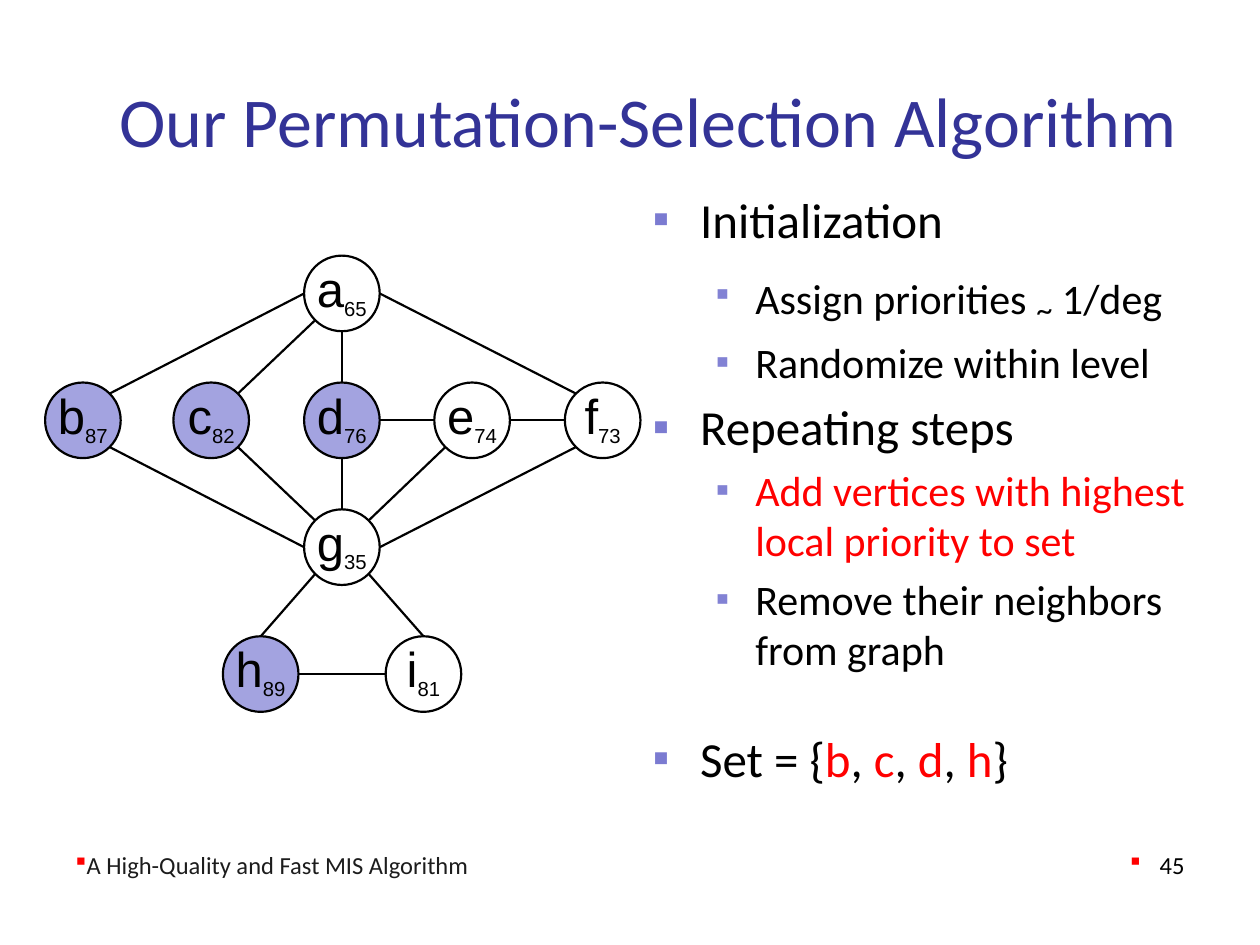
"""Build the permutation-selection algorithm slide with its priority graph."""
import pptx
import pptx.util
import pptx.dml.color
import pptx.enum.shapes
import pptx.enum.text
import pptx.oxml
import pptx.oxml.ns

Pt = pptx.util.Pt
ANCHOR = pptx.enum.text.MSO_ANCHOR
ALIGN = pptx.enum.text.PP_ALIGN
COLORS = {
    "title": "333397", "text": "000000", "accent": "FF0000", "footer": "1C1C1C",
    "chosen": "A3A3E0", "open": "FFFFFF", "bullet": "7B7BD1", "subbullet": "8282D4",
}


def add_run(p, text, size, color="text", font="Calibri", baseline=0):
    r = p.add_run()
    r.text = text
    for name, value in {"size": Pt(size), "name": font}.items():
        setattr(r.font, name, value)
    r.font.color.rgb = pptx.dml.color.RGBColor.from_string(COLORS[color])
    if baseline:
        r._r.get_or_add_rPr().set("baseline", str(baseline * 1000))


def add_bullet(p, color, percent, margin=0, indent=0, font="Calibri", char="▪"):
    pPr = p._p.get_or_add_pPr()
    pPr.set("marL", str(Pt(margin)))
    pPr.set("indent", str(Pt(indent)))
    ns = pptx.oxml.ns.nsdecls("a")
    for xml in (
        f'<a:buClr {ns}><a:srgbClr val="{COLORS[color]}"/></a:buClr>',
        f'<a:buSzPct {ns} val="{percent * 1000}"/>',
        f'<a:buFont {ns} typeface="{font}"/>',
        f'<a:buChar {ns} char="{char}"/>',
    ):
        pPr.append(pptx.oxml.parse_xml(xml))


prs = pptx.Presentation()
prs.slide_width, prs.slide_height = Pt(720), Pt(540)
s = prs.slides.add_slide(prs.slide_layouts[6])

boxes = {
    "title": (36, 43.2, 648, 50.4, ANCHOR.MIDDLE),
    "body": (366, 104.7, 324, 352.8, ANCHOR.TOP),
    "footer": (36, 470.2, 498, 36, ANCHOR.BOTTOM),
    "number": (534.2, 470.2, 149.8, 36, ANCHOR.BOTTOM),
}
frames = {}
for name, (x, y, w, h, anchor) in boxes.items():
    sp = s.shapes.add_textbox(Pt(x), Pt(y), Pt(w), Pt(h))
    tf = frames[name] = sp.text_frame
    for key, value in {"word_wrap": True, "vertical_anchor": anchor}.items():
        setattr(tf, key, value)

frames["title"].margin_left = Pt(32.4)
add_run(frames["title"].paragraphs[0], "Our Permutation-Selection Algorithm", 40, "title")

p = frames["footer"].paragraphs[0]
add_bullet(p, "accent", 100, font="Wingdings", char="§")
add_run(p, "A High-Quality and Fast MIS Algorithm", 14, "footer")

p = frames["number"].paragraphs[0]
p.alignment = ALIGN.RIGHT
add_bullet(p, "accent", 100, 17, -17, "Wingdings", "§")
add_run(p, "45", 14)

set_runs = [("Set = {", 28)]
for i, vertex in enumerate("bcdh"):
    if i:
        set_runs.append((", ", 28))
    set_runs.append((vertex, 28, "accent"))
set_runs.append(("}", 28))

outline = [
    (0, 0, [("Initialization", 28)]),
    (1, 6, [("Assign priorities ", 24), ("~", 32, "text", "Calibri", -12), (" 1/deg", 24)]),
    (1, 5, [("Randomize within level", 24)]),
    (0, 5.6, [("Repeating steps", 28)]),
    (1, 4.8, [("Add vertices with highest local priority to set", 24, "accent")]),
    (1, 4.8, [("Remove their neighbors from graph", 24)]),
    (0, 31, set_runs),
]
bullets = [("bullet", 95, 27, -27), ("subbullet", 90, 58.5, -22.5)]
tf = frames["body"]
for i, (level, before, runs) in enumerate(outline):
    p = tf.add_paragraph() if i else tf.paragraphs[0]
    add_bullet(p, *bullets[level])
    for key, value in {"level": level, "space_before": Pt(before)}.items():
        setattr(p, key, value)
    for run in runs:
        add_run(p, *run)

diameter, top, row_gap = 43.2, 167.7, 72.5
nodes = {
    "a": (195.4, 0, 65), "b": (47.4, 1, 87), "c": (120.7, 1, 82),
    "d": (195.4, 1, 76), "e": (269.8, 1, 74), "f": (344.4, 1, 73),
    "g": (195.4, 2, 35), "h": (149, 3, 89), "i": (242, 3, 81),
}
diagonal = 0.5 ** 0.5
sites = {
    "N": (0, -1), "S": (0, 1), "W": (-1, 0), "E": (1, 0),
    "NW": (-diagonal, -diagonal), "NE": (diagonal, -diagonal),
    "SW": (-diagonal, diagonal), "SE": (diagonal, diagonal),
}
edges = [
    "a W b NE", "a SW c NE", "a S d N", "a E f NW", "d E e W", "e E f W",
    "b SE g W", "c SE g NW", "d S g N", "e SW g NE", "f SW g E",
    "g SW h N", "g SE i N", "h E i W",
]
black = pptx.dml.color.RGBColor.from_string(COLORS["text"])
for edge in edges:
    start, start_site, end, end_site = edge.split()
    ends = []
    for node, site in ((start, start_site), (end, end_site)):
        x, row, priority = nodes[node]
        dx, dy = sites[site]
        ends += [Pt(x + dx * diameter / 2), Pt(top + row * row_gap + dy * diameter / 2)]
    sp = s.shapes.add_connector(pptx.enum.shapes.MSO_CONNECTOR.STRAIGHT, *ends)
    sp.line.width = Pt(1.25)
    sp.line.color.rgb = black
    sp._element.spPr.append(pptx.oxml.parse_xml(f'<a:effectLst {pptx.oxml.ns.nsdecls("a")}/>'))

for node, (x, row, priority) in nodes.items():
    sp = s.shapes.add_shape(
        pptx.enum.shapes.MSO_SHAPE.OVAL, Pt(x - diameter / 2),
        Pt(top + row * row_gap - diameter / 2), Pt(diameter), Pt(diameter))
    sp.shadow.inherit = False
    sp.fill.solid()
    fill = COLORS["chosen" if node in "bcdh" else "open"]
    sp.fill.fore_color.rgb = pptx.dml.color.RGBColor.from_string(fill)
    sp.line.width = Pt(1.25)
    sp.line.color.rgb = black
    tf = sp.text_frame
    layout = {"word_wrap": False, "vertical_anchor": ANCHOR.BOTTOM}
    layout.update({f"margin_{side}": 0 for side in ("left", "top", "right", "bottom")})
    for key, value in layout.items():
        setattr(tf, key, value)
    p = tf.paragraphs[0]
    p.alignment = ALIGN.CENTER
    add_run(p, node, 28, font="Arial")
    add_run(p, str(priority), 20, font="Arial", baseline=-25)

prs.save("out.pptx")
